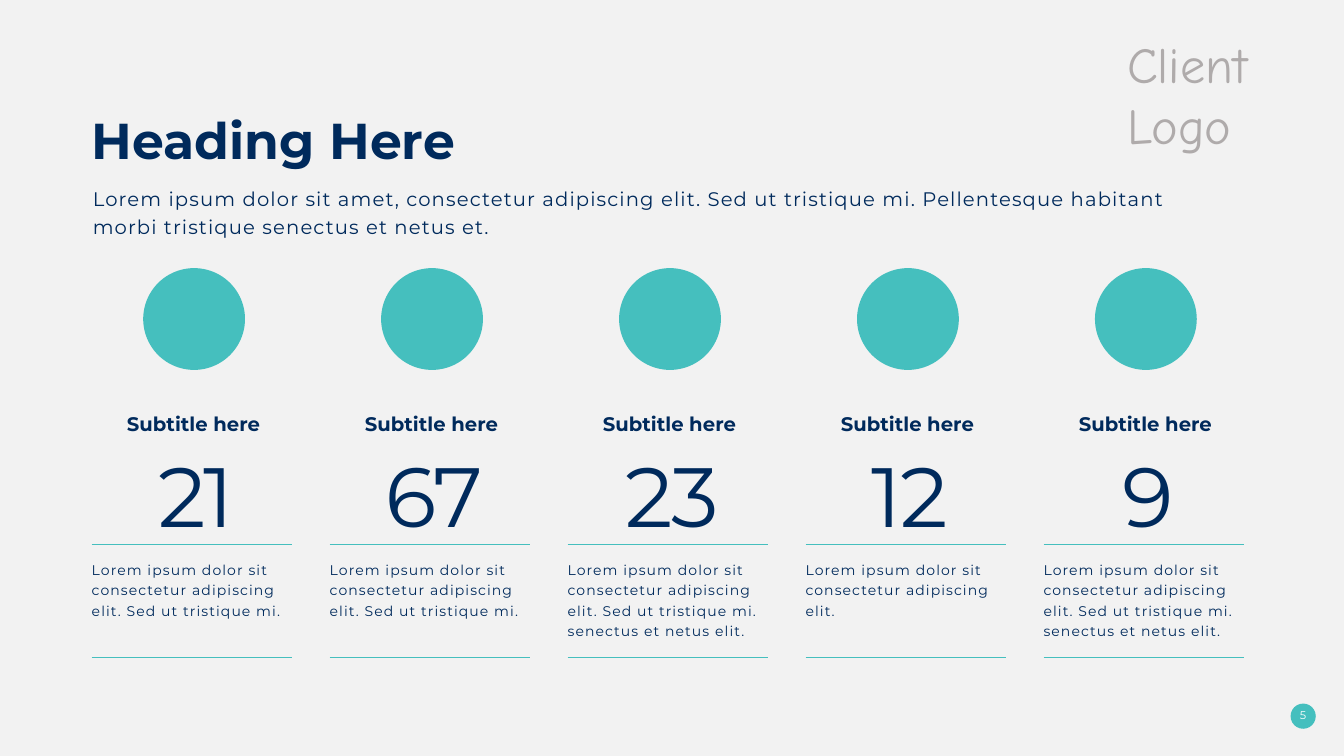
from lxml.etree import SubElement
from pptx import Presentation
from pptx.dml.color import RGBColor
from pptx.enum.shapes import MSO_CONNECTOR, MSO_SHAPE
from pptx.enum.text import MSO_ANCHOR, PP_ALIGN
from pptx.oxml.ns import qn
from pptx.util import Inches, Pt

COLORS = {"background": "F2F2F2", "navy": "002A5C", "teal": "45BFBE", "gray": "AFABAB", "white": "FFFFFF"}
HEADING = "Heading Here"
INTRO = ("Lorem ipsum dolor sit amet, consectetur adipiscing elit. Sed ut tristique mi. "
         "Pellentesque habitant morbi tristique senectus et netus et.")
SHORT = "Lorem ipsum dolor sit consectetur adipiscing elit."
MEDIUM = SHORT + " Sed ut tristique mi."
LONG = MEDIUM + "\nsenectus et netus elit."
COLUMNS = [
    ("Subtitle here", "21", MEDIUM),
    ("Subtitle here", "67", MEDIUM),
    ("Subtitle here", "23", LONG),
    ("Subtitle here", "12", SHORT),
    ("Subtitle here", "9", LONG),
]
LEFT, PITCH = 0.91, 2.36
RULE_WIDTH, RULE_TOPS = 1.99, (5.4, 6.52)
CIRCLE = 1.01


def color(name):
    return RGBColor.from_string(COLORS[name])


def add_text(slide, text, box, size, shape=None, font="Montserrat", fill="navy", bold=False,
             align=PP_ALIGN.LEFT, anchor=MSO_ANCHOR.TOP, line=1.0, spacing=0, insets=(0, 0, 0, 0)):
    box = [Inches(value) for value in box]
    if shape is None:
        shape = slide.shapes.add_textbox(*box)
    else:
        shape.left, shape.top, shape.width, shape.height = box
    frame = shape.text_frame
    frame.word_wrap = True
    frame.vertical_anchor = anchor
    frame.margin_left, frame.margin_top, frame.margin_right, frame.margin_bottom = map(Inches, insets)
    paragraph = frame.paragraphs[0]
    paragraph.text = text
    paragraph.alignment = align
    paragraph.line_spacing = line
    paragraph.space_before = Pt(0)
    for run in paragraph.runs:
        run.font.name = font
        run.font.size = Pt(size)
        run.font.bold = bold
        run.font.color.rgb = color(fill)
        if spacing:
            run.font._element.set("spc", str(round(spacing * 100)))


def add_circle(slide, left, top, size):
    shape = slide.shapes.add_shape(MSO_SHAPE.OVAL, Inches(left), Inches(top), Inches(size), Inches(size))
    shape.shadow.inherit = False
    shape.fill.solid()
    shape.fill.fore_color.rgb = color("teal")
    shape.line.fill.background()


def add_rule(slide, left, top):
    connector = slide.shapes.add_connector(
        MSO_CONNECTOR.STRAIGHT, Inches(left), Inches(top), Inches(left + RULE_WIDTH), Inches(top))
    connector.line.color.rgb = color("teal")
    connector.line.width = Pt(0.5)
    SubElement(connector._element.spPr, qn("a:effectLst"))


def add_column(slide, left, subtitle, number, body):
    add_circle(slide, left + 0.51, 2.66, CIRCLE)
    add_text(slide, subtitle, (left, 4.09, 2.02, 0.27), 14, bold=True,
             align=PP_ALIGN.CENTER, line=0.8, insets=(0, 0.04, 0, 0.04))
    add_text(slide, number, (left + 0.49, 4.59, 1.09, 0.7), 60,
             align=PP_ALIGN.CENTER, line=0.8, spacing=-1.5)
    add_text(slide, body, (left, 5.54, 2.08, 0.79), 10, line=1.2, spacing=0.8)
    for top in RULE_TOPS:
        add_rule(slide, left, top)


def main():
    presentation = Presentation()
    presentation.slide_width = Inches(13.33)
    presentation.slide_height = Inches(7.5)
    slide = presentation.slides.add_slide(presentation.slide_layouts[5])
    slide.background.fill.solid()
    slide.background.fill.fore_color.rgb = color("background")

    add_text(slide, HEADING, (0.91, 1.2, 10.01, 0.43), 36, shape=slide.shapes.title, bold=True, line=0.8)
    add_text(slide, INTRO, (0.92, 1.77, 11.52, 0.62), 14, line=1.2, spacing=0.8,
             insets=(0, 0.04, 0.24, 0.04))
    add_text(slide, "Client Logo", (11.08, 0.28, 1.94, 0.71), 36, font="Comic Neue", fill="gray",
             insets=(0.1, 0.05, 0.1, 0.05))
    for index, column in enumerate(COLUMNS):
        add_column(slide, LEFT + index * PITCH, *column)

    add_circle(slide, 12.8, 6.98, 0.25)
    add_text(slide, "5", (12.63, 7.03, 0.59, 0.13), 8, fill="white",
             align=PP_ALIGN.CENTER, anchor=MSO_ANCHOR.MIDDLE)
    presentation.save("out.pptx")


if __name__ == "__main__":
    main()
